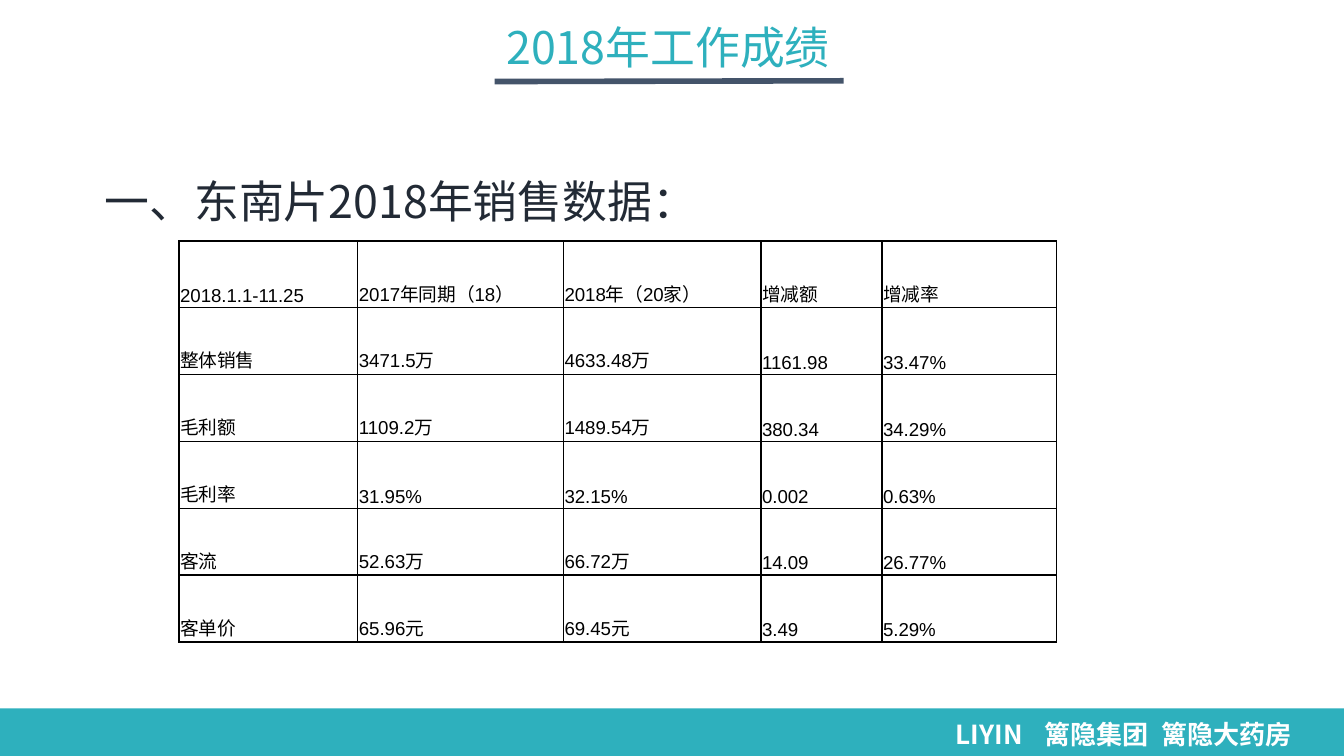
from lxml.etree import SubElement
from pptx import Presentation
from pptx.dml.color import RGBColor
from pptx.enum.shapes import MSO_CONNECTOR, MSO_SHAPE
from pptx.enum.text import MSO_ANCHOR, MSO_AUTO_SIZE, PP_ALIGN
from pptx.oxml.ns import qn
from pptx.util import Pt

TEAL = RGBColor(0x2E, 0xB0, 0xBD)
SLATE = RGBColor(0x44, 0x54, 0x6A)
NAVY = RGBColor(0x22, 0x2A, 0x35)
WHITE = RGBColor(0xFF, 0xFF, 0xFF)
BLACK = RGBColor(0, 0, 0)
CJK_FONT = "Noto Sans CJK SC"


def format_text(text_frame, text, size, color, font_name=CJK_FONT, insets=(7.2, 3.6)):
    """Write one paragraph with a Latin font and the shared East Asian font."""
    text_frame.margin_left = text_frame.margin_right = Pt(insets[0])
    text_frame.margin_top = text_frame.margin_bottom = Pt(insets[1])
    text_frame.word_wrap = True
    text_frame.text = text
    paragraph = text_frame.paragraphs[0]
    paragraph.font.size = Pt(size)
    paragraph.font.color.rgb = color
    paragraph.font.name = font_name
    properties = paragraph._p.get_or_add_pPr().find(qn("a:defRPr"))
    SubElement(properties, qn("a:ea"), typeface=CJK_FONT)
    return paragraph


def add_borders(cell):
    """Draw a thin black line on every side of a cell, ahead of its fill."""
    properties = cell._tc.get_or_add_tcPr()
    for position, side in enumerate(("a:lnL", "a:lnR", "a:lnT", "a:lnB")):
        line = SubElement(properties, qn(side), w=str(Pt(1)))
        fill = SubElement(line, qn("a:solidFill"))
        SubElement(fill, qn("a:srgbClr"), val=str(BLACK))
        properties.insert(position, line)


presentation = Presentation()
presentation.slide_width = Pt(720)
presentation.slide_height = Pt(405)
slide = presentation.slides.add_slide(presentation.slide_layouts[5])
shapes = slide.shapes

# Footer bar
footer_bar = shapes.add_shape(MSO_SHAPE.RECTANGLE, 0, Pt(379.5), Pt(720), Pt(26.5))
footer_bar.shadow.inherit = False
footer_bar.fill.solid()
footer_bar.fill.fore_color.rgb = TEAL
footer_bar.line.fill.background()

# Footer names, spaced with tab stops
footer = shapes.add_textbox(Pt(507), Pt(382.5), Pt(219.5), Pt(22))
paragraph = format_text(footer.text_frame, "LIYIN\t篱隐集团\t篱隐大药房", 14, WHITE,
                        insets=(5, 2.6))
paragraph.font.bold = True
paragraph_properties = paragraph._p.get_or_add_pPr()
tab_list = SubElement(paragraph_properties, qn("a:tabLst"))
for position in (47.5, 110):
    SubElement(tab_list, qn("a:tab"), pos=str(Pt(position)), algn="l")
paragraph_properties.find(qn("a:defRPr")).addprevious(tab_list)

# Title and its underline
title = shapes.title
title.left, title.top, title.width, title.height = Pt(121.7), Pt(8.6), Pt(472.3), Pt(36)
paragraph = format_text(title.text_frame, "2018年工作成绩", 24, TEAL, insets=(0, 3.6))
paragraph.alignment = PP_ALIGN.CENTER
paragraph.line_spacing = 0.9
title.text_frame.vertical_anchor = MSO_ANCHOR.MIDDLE
title.text_frame.auto_size = MSO_AUTO_SIZE.NONE

underline = shapes.add_connector(MSO_CONNECTOR.STRAIGHT, Pt(265), Pt(43.7), Pt(452), Pt(43.3))
underline.line.color.rgb = SLATE
underline.line.width = Pt(3)
SubElement(underline._element.spPr, qn("a:effectLst"))

# Section heading
heading = shapes.add_textbox(Pt(49), Pt(89.3), Pt(511), Pt(36))
format_text(heading.text_frame, "一、东南片2018年销售数据：", 24, NAVY)

# Sales table
rows = [
    ["2018.1.1-11.25", "2017年同期（18）", "2018年（20家）", "增减额", "增减率"],
    ["整体销售", "3471.5万", "4633.48万", "1161.98", "33.47%"],
    ["毛利额", "1109.2万", "1489.54万", "380.34", "34.29%"],
    ["毛利率", "31.95%", "32.15%", "0.002", "0.63%"],
    ["客流", "52.63万", "66.72万", "14.09", "26.77%"],
    ["客单价", "65.96元", "69.45元", "3.49", "5.29%"],
]
column_widths = [95.8, 110.2, 105.8, 64.8, 93.6]
row_height = 35.85
table = shapes.add_table(len(rows), len(column_widths), Pt(95.8), Pt(129),
                         Pt(sum(column_widths)), Pt(row_height * len(rows))).table
for column, width in zip(table.columns, column_widths):
    column.width = Pt(width)
for row, values in zip(table.rows, rows):
    row.height = Pt(row_height)
    for cell, value in zip(row.cells, values):
        format_text(cell.text_frame, value, 10, BLACK, "Arial").font.bold = False
        cell.margin_left = cell.margin_right = Pt(0.7)
        cell.margin_top = cell.margin_bottom = Pt(0.7)
        cell.vertical_anchor = MSO_ANCHOR.BOTTOM
        cell.fill.solid()
        cell.fill.fore_color.rgb = WHITE
        add_borders(cell)

presentation.save("out.pptx")
